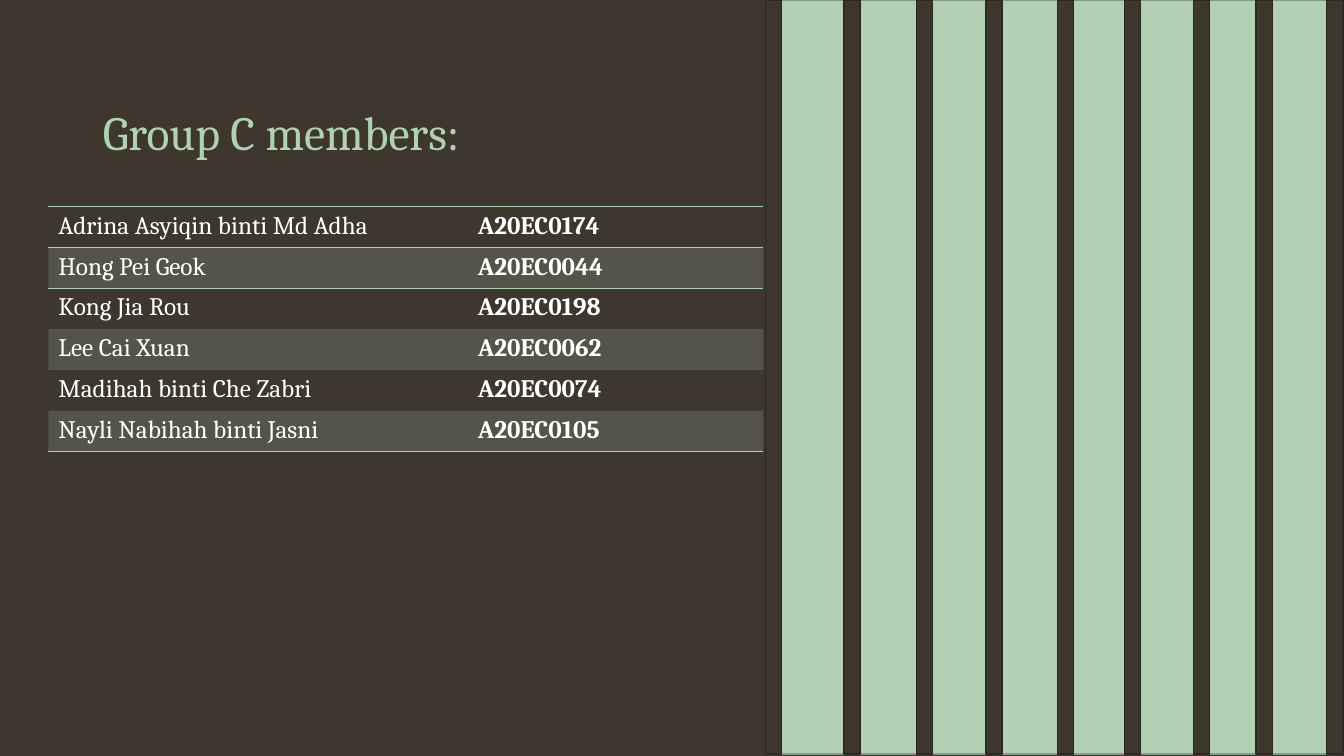
import pptx
import pptx.util
import pptx.dml.color
import pptx.enum.shapes
import pptx.enum.text
import pptx.oxml
import pptx.oxml.ns
import lxml.etree
import dataclasses


@dataclasses.dataclass(frozen=True)
class Theme:
    dark: str = "3D372E"
    edge: str = "2D2922"
    mint: str = "B2D0B4"
    rim: str = "849A85"
    white: str = "FFFFFF"
    font: str = "Cambria"
    head: int = 34
    body: int = 18
    line: int = 1
    tint: int = 20
    plain: str = "{2D5ABB26-0587-4C30-8999-92F81FD0307C}"


def color(code):
    return pptx.dml.color.RGBColor.from_string(code)


class Page:
    """Draws on one slide; lengths are percent of its width or height."""

    def __init__(self, deck, theme):
        self.deck, self.theme = deck, theme
        self.slide = deck.slides.add_slide(deck.slide_layouts[5])
        back = self.slide.background.fill
        back.solid()
        back.fore_color.rgb = color(theme.dark)

    def wide(self, share):
        return round(self.deck.slide_width * share / 100)

    def high(self, share):
        return round(self.deck.slide_height * share / 100)

    def box(self, left, top, width, height):
        return self.wide(left), self.high(top), self.wide(width), self.high(height)

    def text(self, para, words, size, code, bold=False):
        run = para.add_run()
        run.text = words
        font = run.font
        font.name, font.size, font.bold = self.theme.font, pptx.util.Pt(size), bold
        font.color.rgb = color(code)

    def title(self, words, *place):
        shape = self.slide.shapes.title
        shape.left, shape.top, shape.width, shape.height = self.box(*place)
        frame = shape.text_frame
        frame.word_wrap = True
        frame.vertical_anchor = pptx.enum.text.MSO_ANCHOR.BOTTOM
        para = frame.paragraphs[0]
        para.alignment = pptx.enum.text.PP_ALIGN.LEFT
        para.line_spacing = 0.9
        self.text(para, words, self.theme.head, self.theme.mint)

    def rect(self, fill, line, *place):
        shape = self.slide.shapes.add_shape(
            pptx.enum.shapes.MSO_SHAPE.RECTANGLE, *self.box(*place))
        shape.shadow.inherit = False
        shape.fill.solid()
        shape.fill.fore_color.rgb = color(fill)
        shape.line.color.rgb = color(line)
        shape.line.width = pptx.util.Pt(self.theme.line)

    def rule(self, cell, side):
        """Draw a cell border; side is T or B. Call before filling the cell."""
        width = pptx.util.Pt(self.theme.line)
        cell._tc.get_or_add_tcPr().append(pptx.oxml.parse_xml(
            f'<a:ln{side} {pptx.oxml.ns.nsdecls("a")} w="{width}"><a:solidFill>'
            f'<a:srgbClr val="{self.theme.mint}"/></a:solidFill></a:ln{side}>'))

    def shade(self, cell, band):
        if not band:
            cell.fill.background()
            return
        cell.fill.solid()
        cell.fill.fore_color.rgb = color(self.theme.mint)
        tone = cell._tc.xpath("./a:tcPr/a:solidFill/a:srgbClr")[0]
        alpha = lxml.etree.SubElement(tone, pptx.oxml.ns.qn("a:alpha"))
        alpha.set("val", str(self.theme.tint * 1000))

    def table(self, rows, left, top, cols, step):
        place = self.box(left, top, sum(cols), step * len(rows))
        frame = self.slide.shapes.add_table(len(rows), len(cols), *place)
        grid = frame.table
        grid.first_row = grid.horz_banding = False
        frame._element.xpath(".//a:tableStyleId")[0].text = self.theme.plain
        for col, share in zip(grid.columns, cols):
            col.width = self.wide(share)
        for i, row in enumerate(rows):
            grid.rows[i].height = self.high(step)
            for j, words in enumerate(row):
                cell = grid.cell(i, j)
                if i < 2:
                    self.rule(cell, "T")
                if i in (0, len(rows) - 1):
                    self.rule(cell, "B")
                self.shade(cell, i % 2 == 1)
                self.text(cell.text_frame.paragraphs[0], words,
                          self.theme.body, self.theme.white, bold=j == 1)


MEMBERS = [
    ("Adrina Asyiqin binti Md Adha", "A20EC0174"),
    ("Hong Pei Geok", "A20EC0044"),
    ("Kong Jia Rou", "A20EC0198"),
    ("Lee Cai Xuan", "A20EC0062"),
    ("Madihah binti Che Zabri", "A20EC0074"),
    ("Nayli Nabihah binti Jasni", "A20EC0105"),
]
BARS = [56.94, 62.79, 68.19, 73.37, 78.69, 83.65, 88.82, 93.47, 98.72]
TALL = 99.73


def main():
    deck = pptx.Presentation()
    deck.slide_width = pptx.util.Inches(13.33)
    deck.slide_height = pptx.util.Inches(7.5)
    theme = Theme()
    page = Page(deck, theme)
    page.title("Group C members:", 6.9, 5.33, 86.27, 16.67)
    page.rect(theme.mint, theme.rim, 57.24, 0, 42.16, TALL)
    for left in BARS:
        page.rect(theme.dark, theme.edge, left, 0, 1.2, TALL)
    page.table(MEMBERS, 3.6, 27.33, (31.21, 21.98), 5.4)
    deck.save("out.pptx")


if __name__ == "__main__":
    main()
